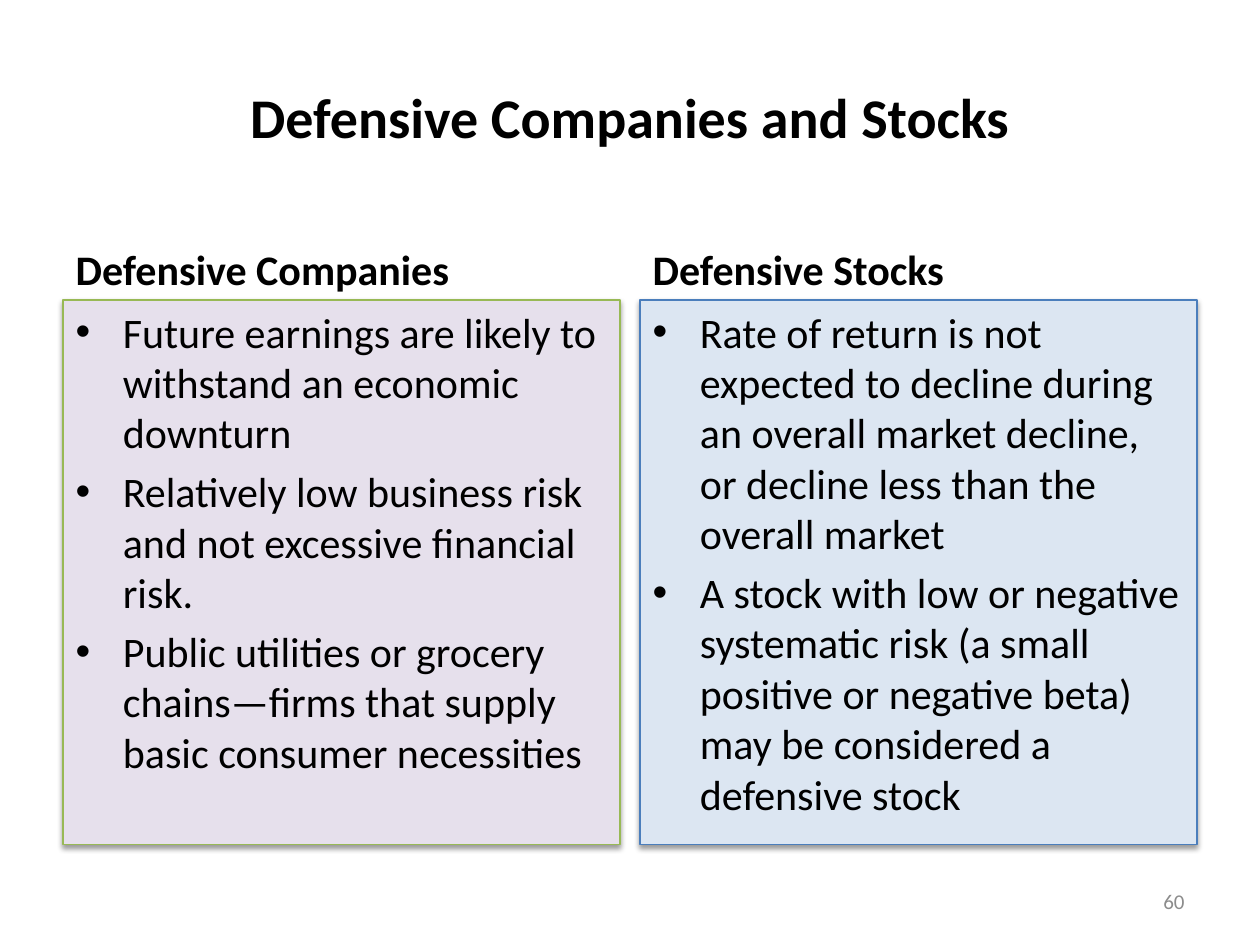
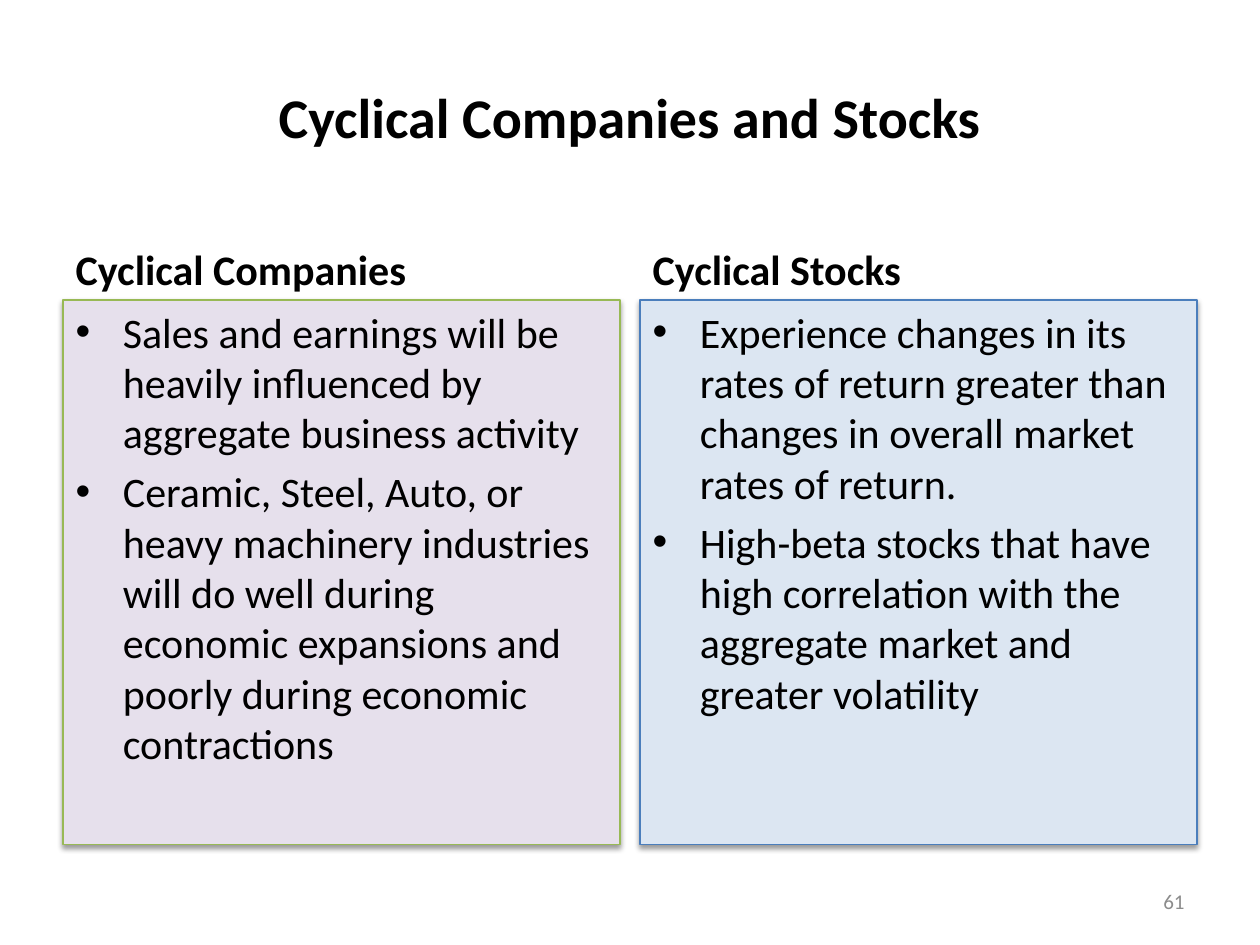
import pptx
import pptx.util
import pptx.dml.color
import pptx.enum.text
import pptx.oxml
import pptx.oxml.ns
from pptx.util import Inches

# Content: title, page number, then (heading, bullets) for each column
SLIDES = [
    ("Defensive Companies and Stocks", 60, [
        ("Defensive Companies", [
            "Future earnings are likely to withstand an economic downturn",
            "Relatively low business risk and not excessive financial risk.",
            "Public utilities or grocery chains—firms that supply basic consumer necessities",
        ]),
        ("Defensive Stocks", [
            "Rate of return is not expected to decline during an overall market decline, "
            "or decline less than the overall market",
            "A stock with low or negative systematic risk (a small positive or negative beta) "
            "may be considered a defensive stock",
        ]),
    ]),
    ("Cyclical Companies and Stocks", 61, [
        ("Cyclical Companies", [
            "Sales and earnings will be heavily influenced by aggregate business activity",
            "Ceramic, Steel, Auto, or heavy machinery industries will do well during "
            "economic expansions and poorly during economic contractions",
        ]),
        ("Cyclical Stocks", [
            "Experience changes in its rates of return greater than changes in overall "
            "market rates of return.",
            "High-beta stocks that have high correlation with the aggregate market "
            "and greater volatility",
        ]),
    ]),
]

# Shared style
FONT = "Calibri"
BLACK, GRAY = "000000", "8C8C8C"
PANEL_COLORS = [("E6E0EC", "98B955"), ("DCE6F2", "4B7EBC")]  # fill, line

# Shared layout, in inches
SLIDE_WIDTH, SLIDE_HEIGHT = 10, 7.5
MARGIN = 0.5
COLUMN_WIDTH = 4.42
COLUMN_STEP = SLIDE_WIDTH - 2 * MARGIN - COLUMN_WIDTH
HEADING_TOP, HEADING_HEIGHT = 1.68, 0.7
PANEL_TOP, PANEL_HEIGHT = HEADING_TOP + HEADING_HEIGHT, 4.32
NUMBER_WIDTH = 2.33

COMPARISON_LAYOUT = 4
ALIGN = pptx.enum.text.PP_ALIGN
ANCHOR = pptx.enum.text.MSO_ANCHOR


def color(hex_string):
    return pptx.dml.color.RGBColor.from_string(hex_string)


def place(shape, left, top, width, height):
    shape.left, shape.top = Inches(left), Inches(top)
    shape.width, shape.height = Inches(width), Inches(height)


def write(shape, lines, size, bold=False, font_color=BLACK, align=ALIGN.LEFT, anchor=ANCHOR.TOP):
    frame = shape.text_frame
    frame.text = "\n".join(lines)
    frame.word_wrap = True
    frame.auto_size = pptx.enum.text.MSO_AUTO_SIZE.NONE
    frame.vertical_anchor = anchor
    for paragraph in frame.paragraphs:
        paragraph.alignment = align
        for run in paragraph.runs:
            run.font.name = FONT
            run.font.size = pptx.util.Pt(size)
            run.font.bold = bold
            run.font.color.rgb = color(font_color)


def style_panel(shape, fill_color, line_color):
    shape.fill.solid()
    shape.fill.fore_color.rgb = color(fill_color)
    shape.line.color.rgb = color(line_color)
    shape.line.width = pptx.util.Pt(0.75)
    # Soft shadow falling straight down
    shape._element.spPr.append(pptx.oxml.parse_xml(
        f'<a:effectLst {pptx.oxml.ns.nsdecls("a")}>'
        '<a:outerShdw blurRad="40000" dist="20000" dir="5400000" rotWithShape="0">'
        f'<a:srgbClr val="{BLACK}"><a:alpha val="38000"/></a:srgbClr>'
        '</a:outerShdw></a:effectLst>'))


def add_comparison(presentation, title, number, columns):
    slide = presentation.slides.add_slide(presentation.slide_layouts[COMPARISON_LAYOUT])
    title_shape, *bodies = slide.placeholders

    # Title
    place(title_shape, MARGIN, 0.3, SLIDE_WIDTH - 2 * MARGIN, 1.25)
    write(title_shape, [title], 32, bold=True, align=ALIGN.CENTER, anchor=ANCHOR.MIDDLE)

    # Two columns, each a heading above a coloured panel
    for index, (heading, bullets) in enumerate(columns):
        heading_shape, panel = bodies[2 * index:2 * index + 2]
        left = MARGIN + index * COLUMN_STEP
        place(heading_shape, left, HEADING_TOP, COLUMN_WIDTH, HEADING_HEIGHT)
        write(heading_shape, [heading], 24, bold=True, anchor=ANCHOR.BOTTOM)
        place(panel, left, PANEL_TOP, COLUMN_WIDTH, PANEL_HEIGHT)
        write(panel, bullets, 24)
        style_panel(panel, *PANEL_COLORS[index])

    # Page number
    number_box = slide.shapes.add_textbox(0, 0, 0, 0)
    place(number_box, SLIDE_WIDTH - MARGIN - NUMBER_WIDTH, 6.95, NUMBER_WIDTH, 0.4)
    write(number_box, [str(number)], 12, font_color=GRAY, align=ALIGN.RIGHT, anchor=ANCHOR.MIDDLE)


def main():
    presentation = pptx.Presentation()
    presentation.slide_width = Inches(SLIDE_WIDTH)
    presentation.slide_height = Inches(SLIDE_HEIGHT)
    for title, number, columns in SLIDES:
        add_comparison(presentation, title, number, columns)
    presentation.save("out.pptx")


if __name__ == "__main__":
    main()
